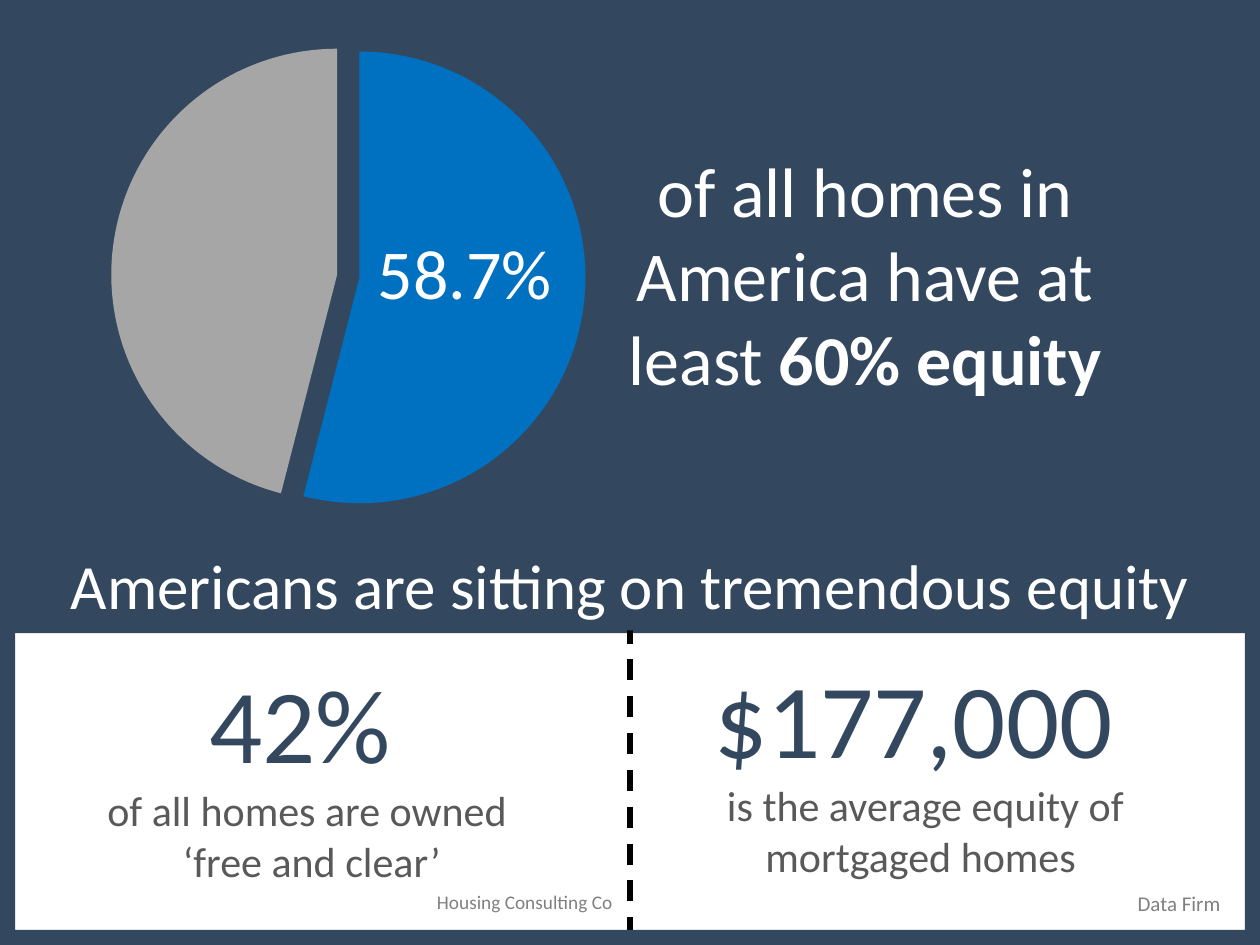
from lxml import etree
from pptx import Presentation
from pptx.chart.data import CategoryChartData
from pptx.dml.color import RGBColor
from pptx.enum.chart import XL_CHART_TYPE as Chart
from pptx.enum.dml import MSO_LINE
from pptx.enum.shapes import MSO_CONNECTOR, MSO_SHAPE
from pptx.enum.text import MSO_ANCHOR, PP_ALIGN
from pptx.oxml.ns import qn
from pptx.util import Inches, Pt

NAVY = RGBColor(0x33, 0x48, 0x5F)
WHITE = RGBColor(0xFF, 0xFF, 0xFF)
BLACK = RGBColor(0, 0, 0)
BLUE = RGBColor(0x00, 0x70, 0xC0)
SILVER = RGBColor(0xA6, 0xA6, 0xA6)
DARK_GREY = RGBColor(0x59, 0x59, 0x59)
MID_GREY = RGBColor(0x80, 0x80, 0x80)
FONT = "Calibri"

WIDTH, HEIGHT = Inches(10), Inches(7.5)
BAND = (0, 0, WIDTH, int(HEIGHT * 0.67))
FACTS = (0, BAND[3], WIDTH, HEIGHT - BAND[3])


def within(box, x, y, w, h):
    """Box given by shares of the outer box."""
    left, top, width, height = box
    return (int(left + x * width), int(top + y * height),
            int(w * width), int(h * height))


def style(run, size, color, bold=False):
    font = run.font
    font.name, font.size, font.bold = FONT, Pt(size), bold
    font.color.rgb = color


def add_text(s, box, paragraphs, align=PP_ALIGN.CENTER, wrap=True):
    """Each paragraph is a list of (text, size, color[, bold]) runs."""
    tf = s.shapes.add_textbox(*box).text_frame
    tf.word_wrap = wrap
    for i, runs in enumerate(paragraphs):
        p = tf.paragraphs[0] if i == 0 else tf.add_paragraph()
        p.alignment = align
        for text, *look in runs:
            r = p.add_run()
            r.text = text
            style(r, *look)


def add_filled(s, preset, box):
    sp = s.shapes.add_shape(preset, *box)
    sp.shadow.inherit = False
    sp.fill.solid()
    sp.fill.fore_color.rgb = NAVY
    sp.line.fill.background()
    return sp


def add_pie(s, box):
    data = CategoryChartData()
    data.categories = ["1", "2"]
    data.add_series("Series 1", (54, 46))
    chart = s.shapes.add_chart(Chart.PIE, *box, data).chart
    chart.has_legend = chart.has_title = False
    chart.font.name, chart.font.size = FONT, Pt(10)
    chart.font.color.rgb = BLACK
    plot = chart.plots[0]
    plot.vary_by_categories = True
    series = plot.series[0]
    for i, color in enumerate((BLUE, SILVER)):
        fill = series.points[i].format.fill
        fill.solid()
        fill.fore_color.rgb = color
    explosion = etree.Element(qn("c:explosion"), val="5")
    series.points[0].format
    series._element.find(qn("c:dPt")).addprevious(explosion)


def add_equity_share(s, box):
    """Pie with its label and the statement beside it."""
    add_text(s, within(box, 0.456, 0.223, 0.461, 0.422),
             [[("of all homes in America have at least ", 40, WHITE),
               ("60% equity", 40, WHITE, True)]])
    add_pie(s, within(box, 0.037, 0.034, 0.479, 0.804))
    add_text(s, within(box, 0.29, 0.352, 0.16, 0.153),
             [[("58.7%", 40, WHITE)]], PP_ALIGN.LEFT, wrap=False)


def add_headline(s, box):
    title = s.shapes.title
    title.left, title.top, title.width, title.height = box
    title.fill.solid()
    title.fill.fore_color.rgb = NAVY
    tf = title.text_frame
    tf.text = "Americans are sitting on tremendous equity"
    tf.word_wrap = True
    tf.vertical_anchor = MSO_ANCHOR.TOP
    p = tf.paragraphs[0]
    p.alignment = PP_ALIGN.CENTER
    style(p.runs[0], 36, WHITE)
    s.shapes.element.append(title.element)  # in front of the band and divider


def add_divider(s, box):
    left, top, width, height = box
    x = left + width // 2
    line = s.shapes.add_connector(MSO_CONNECTOR.STRAIGHT, x, top, x, top + height)
    line.line.color.rgb = BLACK
    line.line.width = Pt(3)
    line.line.dash_style = MSO_LINE.DASH
    etree.SubElement(line._element.spPr, qn("a:effectLst"))


def add_fact(s, box, figure, lines):
    add_text(s, box, [[(figure, 60, NAVY)]]
             + [[(line, 24, DARK_GREY)] for line in lines])


def add_source(s, box, name, size):
    add_text(s, box, [[(name, size, MID_GREY)]], PP_ALIGN.LEFT, wrap=False)


def add_facts(s, box):
    add_fact(s, within(box, 0.039, 0.063, 0.417, 0.776), "42% ",
             ["of all homes are owned ", "‘free and clear’"])
    add_fact(s, within(box, 0.513, 0.047, 0.443, 0.776), "$177,000 ",
             ["is the average equity of mortgaged homes "])
    add_source(s, within(box, 0.337, 0.806, 0.16, 0.117), "Housing Consulting Co", 11)
    add_source(s, within(box, 0.893, 0.806, 0.087, 0.121), "Data Firm", 12)


def main():
    prs = Presentation()
    prs.slide_width, prs.slide_height = WIDTH, HEIGHT
    s = prs.slides.add_slide(prs.slide_layouts[5])
    page = (0, 0, WIDTH, HEIGHT)
    add_filled(s, MSO_SHAPE.RECTANGLE, BAND)
    add_divider(s, within(page, 0, 0.581, 1, 0.414))
    frame = add_filled(s, MSO_SHAPE.FRAME, page)
    frame.adjustments[0] = 0.016
    add_equity_share(s, BAND)
    add_headline(s, within(page, 0.0125, 0.572, 0.975, 0.095))
    add_facts(s, FACTS)
    prs.save("out.pptx")


if __name__ == "__main__":
    main()
